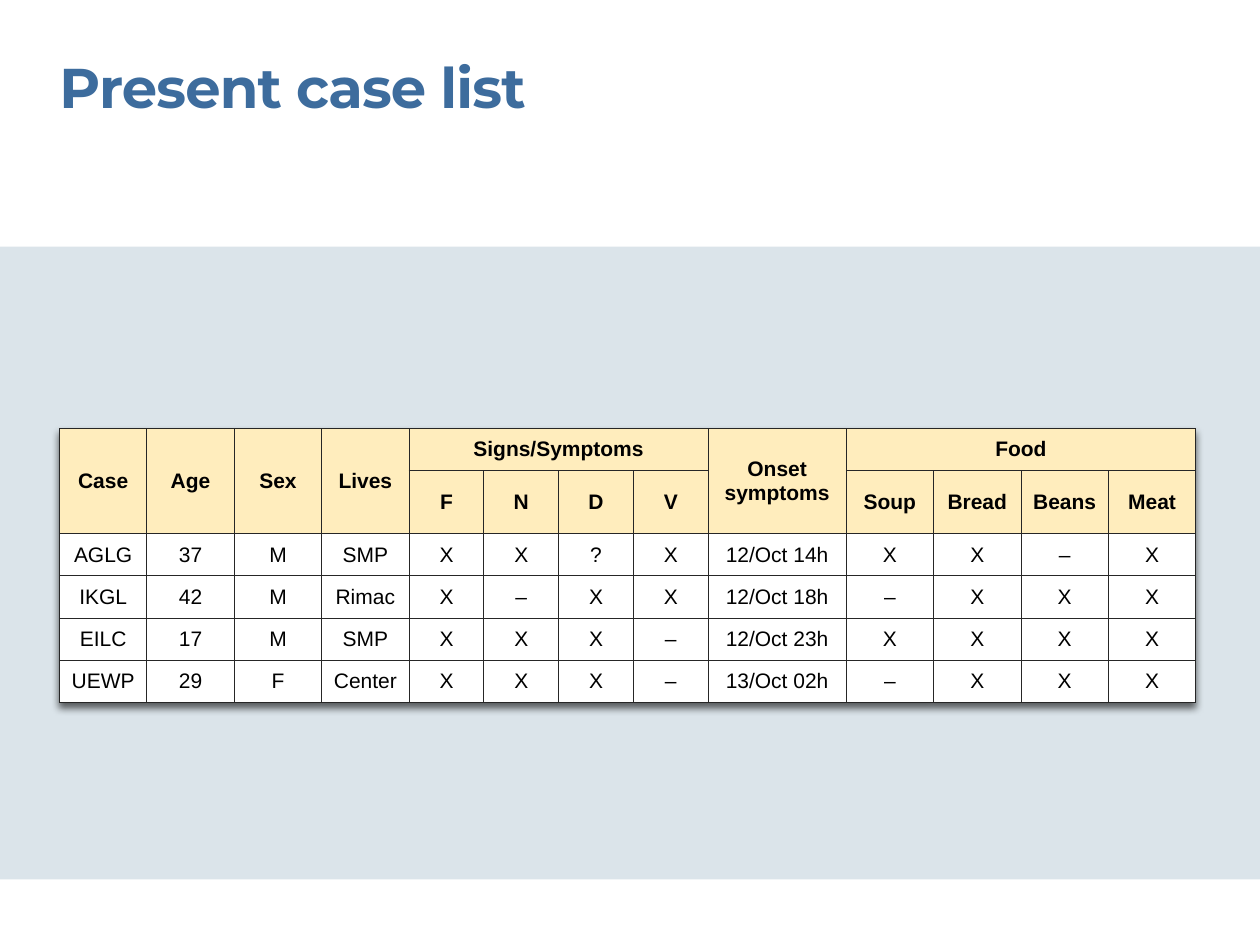
import lxml.etree
import pptx
import pptx.dml.color
import pptx.enum.shapes
import pptx.enum.text
import pptx.oxml
import pptx.oxml.ns
import pptx.util

Pt = pptx.util.Pt
Color = pptx.dml.color.RGBColor
Align = pptx.enum.text.PP_ALIGN
Anchor = pptx.enum.text.MSO_ANCHOR

BLUE = Color(0x3D, 0x6C, 0x9D)
MIST = Color(0xDB, 0xE4, 0xEA)
CREAM = Color(0xFF, 0xED, 0xBD)
WHITE = Color(0xFF, 0xFF, 0xFF)
BLACK = Color(0, 0, 0)
EDGE = Color(0x26, 0x26, 0x26)

HEADS = [
    ["Case", "Age", "Sex", "Lives", "Signs/Symptoms", "", "", "",
     "Onset symptoms", "Food", "", "", ""],
    ["", "", "", "", "F", "N", "D", "V", "", "Soup", "Bread", "Beans", "Meat"],
]
CASES = [
    ["AGLG", "37", "M", "SMP", "X", "X", "?", "X", "12/Oct 14h", "X", "X", "–", "X"],
    ["IKGL", "42", "M", "Rimac", "X", "–", "X", "X", "12/Oct 18h", "–", "X", "X", "X"],
    ["EILC", "17", "M", "SMP", "X", "X", "X", "–", "12/Oct 23h", "X", "X", "X", "X"],
    ["UEWP", "29", "F", "Center", "X", "X", "X", "–", "13/Oct 02h", "–", "X", "X", "X"],
]
WIDTHS = [49.95] * 4 + [42.72] * 4 + [78.9] + [49.95] * 4
SPANS = [(0, col, 1, col) for col in (0, 1, 2, 3, 8)] + [(0, 4, 0, 7), (0, 9, 0, 12)]


def add_run(para, text, font, size, color, bold):
    run = para.add_run()
    run.text = text
    run.font.name = font
    run.font.size = Pt(size)
    run.font.bold = bold
    run.font.color.rgb = color
    return run


def place_title(slide, left, top, width, height):
    title = slide.shapes.title
    title.left, title.top, title.width, title.height = map(Pt, (left, top, width, height))
    frame = title.text_frame
    frame.margin_left = frame.margin_right = frame.margin_top = frame.margin_bottom = 0
    frame.vertical_anchor = Anchor.TOP
    frame.word_wrap = True
    frame.auto_size = pptx.enum.text.MSO_AUTO_SIZE.SHAPE_TO_FIT_TEXT
    para = frame.paragraphs[0]
    para.alignment = Align.LEFT
    run = add_run(para, "Present case list", "Montserrat", 32, BLUE, True)
    run.font._element.set("spc", "-50")


def place_band(slide, left, top, width, height):
    band = slide.shapes.add_shape(
        pptx.enum.shapes.MSO_SHAPE.RECTANGLE, Pt(left), Pt(top), Pt(width), Pt(height))
    band.shadow.inherit = False
    band.fill.solid()
    band.fill.fore_color.rgb = MIST
    band.line.fill.background()


def add_edges(cell):
    props = cell._tc.get_or_add_tcPr()
    for place, side in enumerate(("lnL", "lnR", "lnT", "lnB")):
        props.insert(place, pptx.oxml.parse_xml(
            f'<a:{side} {pptx.oxml.ns.nsdecls("a")} w="{Pt(0.5)}"><a:solidFill>'
            f'<a:srgbClr val="{EDGE}"/></a:solidFill></a:{side}>'))


def add_shade(table):
    table._tbl.tblPr.insert(0, pptx.oxml.parse_xml(
        f'<a:effectLst {pptx.oxml.ns.nsdecls("a")}>'
        f'<a:outerShdw blurRad="{Pt(4)}" dist="{Pt(3)}" dir="5400000" algn="t" '
        'rotWithShape="0"><a:srgbClr val="000000"><a:alpha val="60000"/>'
        '</a:srgbClr></a:outerShdw></a:effectLst>'))


def fill_cell(cell, text, head):
    cell.fill.solid()
    cell.fill.fore_color.rgb = CREAM if head else WHITE
    cell.vertical_anchor = Anchor.MIDDLE
    cell.margin_left = cell.margin_right = Pt(5.4)
    cell.margin_top = cell.margin_bottom = Pt(3.6)
    add_edges(cell)
    if text:
        para = cell.text_frame.paragraphs[0]
        para.alignment = Align.CENTER
        add_run(para, text, "Arial", 12, BLACK, head)


def place_table(slide, left, top, width, height):
    rows = HEADS + CASES
    table = slide.shapes.add_table(
        len(rows), len(WIDTHS), Pt(left), Pt(top), Pt(width), Pt(height)).table
    table.first_row = table.horz_banding = False
    add_shade(table)
    for col, size in zip(table.columns, WIDTHS):
        col.width = Pt(size)
    for i, row in enumerate(rows):
        table.rows[i].height = Pt(height / len(rows))
        for j, text in enumerate(row):
            fill_cell(table.cell(i, j), text, i < len(HEADS))
    for row, col, last, end in SPANS:
        table.cell(row, col).merge(table.cell(last, end))


def main():
    deck = pptx.Presentation()
    deck.slide_width, deck.slide_height = Pt(720), Pt(540)
    slide = deck.slides.add_slide(deck.slide_layouts[5])
    place_title(slide, 34, 30.2, 624, 39)
    place_band(slide, -4, 141, 724, 361.5)
    place_table(slide, 34, 244.8, sum(WIDTHS), 144.6)
    deck.save("out.pptx")


if __name__ == "__main__":
    main()
